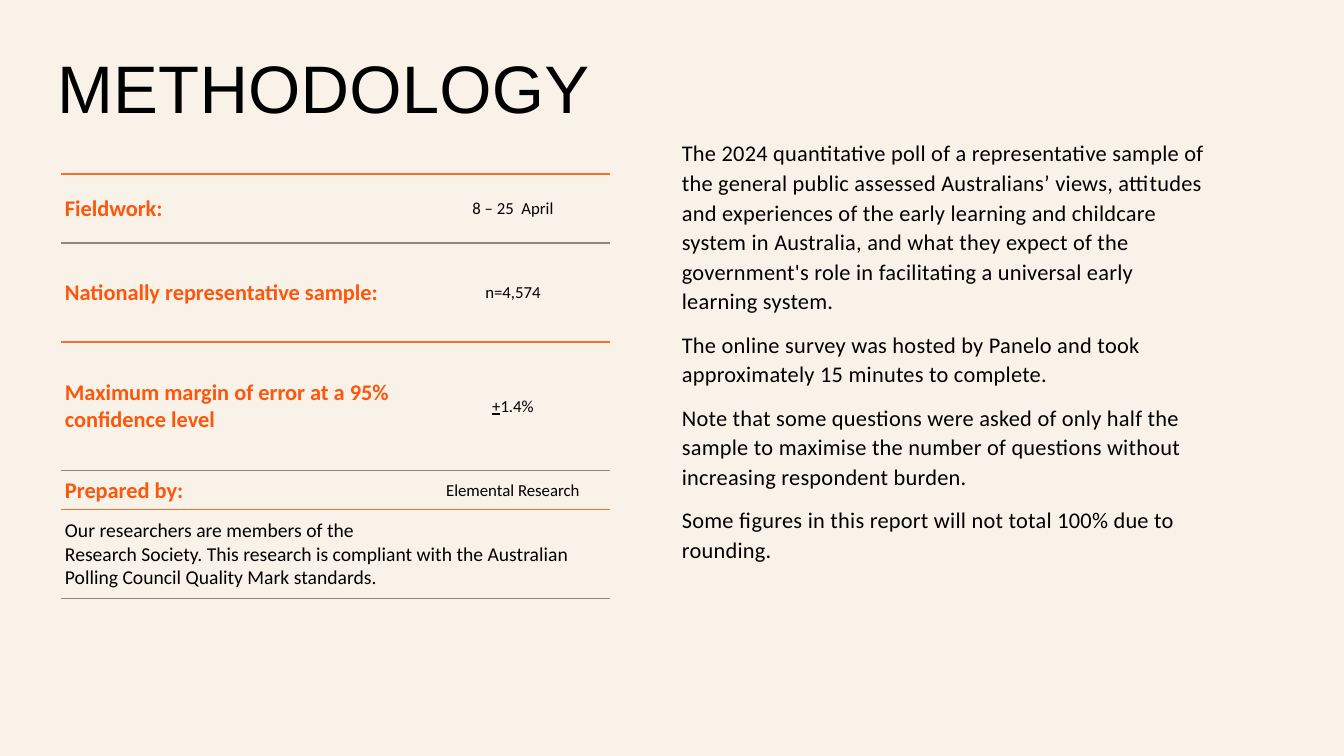
import pptx
import pptx.dml.color
import pptx.enum.text
import pptx.oxml
import pptx.oxml.ns
import pptx.util

RGBColor = pptx.dml.color.RGBColor
CREAM = RGBColor(0xF8, 0xF2, 0xE8)
BLACK = RGBColor(0x00, 0x00, 0x00)
INK = RGBColor(0x01, 0x00, 0x00)
ORANGE = RGBColor(0xFE, 0x56, 0x0C)
RULE_ORANGE = RGBColor(0xFF, 0x6C, 0x2C)
RULE_GREY = RGBColor(0x8F, 0x88, 0x82)
MIDDLE = pptx.enum.text.MSO_ANCHOR.MIDDLE
LEFT = pptx.enum.text.PP_ALIGN.LEFT
CENTER = pptx.enum.text.PP_ALIGN.CENTER
NO_TABLE_STYLE = "{2D5ABB26-0587-4C30-8999-92F81FD0307C}"


def px(length):
    return round(length * 914400 / 100.8)


def write(para, text, size, color, font="Calibri", bold=False, tracking=0):
    """Add a formatted run; tracking is in hundredths of a point."""
    span = para.add_run()
    span.text = text
    formats = {"name": font, "size": pptx.util.Pt(size), "bold": bold}
    for name, value in formats.items():
        setattr(span.font, name, value)
    span.font.color.rgb = color
    if tracking:
        para.runs[-1]._r.get_or_add_rPr().set("spc", str(tracking))
    return span


deck = pptx.Presentation()
deck.slide_width, deck.slide_height = px(1344), px(756)
page = deck.slides.add_slide(deck.slide_layouts[5])
page.background.fill.solid()
page.background.fill.fore_color.rgb = CREAM

# Title
title = page.shapes.title
title.left, title.top, title.width, title.height = px(47), px(40), px(623), px(85)
title.text_frame.vertical_anchor = MIDDLE
title.text_frame.auto_size = pptx.enum.text.MSO_AUTO_SIZE.NONE
para = title.text_frame.paragraphs[0]
para.alignment = LEFT
para.line_spacing = 1.1
write(para, "METHODOLOGY", 48, BLACK, font="Arial", tracking=20)

# Explanation on the right
box = page.shapes.add_textbox(px(672), px(132), px(549), px(579))
box.text_frame.word_wrap = True
notes = [
    "The 2024 quantitative poll of a representative sample of the general public "
    "assessed Australians’ views, attitudes and experiences of the early learning "
    "and childcare system in Australia, and what they expect of the government's "
    "role in facilitating a universal early learning system.",
    "The online survey was hosted by Panelo and took approximately 15 minutes to complete.",
    "Note that some questions were asked of only half the sample to maximise the "
    "number of questions without increasing respondent burden.",
    "Some figures in this report will not total 100% due to rounding.",
]
for index, note in enumerate(notes):
    para = box.text_frame.add_paragraph() if index else box.text_frame.paragraphs[0]
    para.line_spacing = 1.1
    para.space_after = pptx.util.Pt(10)
    write(para, note, 16, INK, tracking=20)

# Survey facts
facts = [
    ("Fieldwork:", "8 – 25  April"),
    ("Nationally representative sample:", "n=4,574"),
    ("Maximum margin of error at a 95% confidence level", "+1.4%"),
    ("Prepared by:", "Elemental Research"),
]
column_widths = [355, 194]
row_heights = [42, 69, 99, 129, 39, 89]
frame = page.shapes.add_table(len(row_heights), len(column_widths), px(61), px(132),
                              px(sum(column_widths)), px(sum(row_heights)))
table = frame.table
table.first_row = table.horz_banding = False
table._tbl.tblPr.find(pptx.oxml.ns.qn("a:tableStyleId")).text = NO_TABLE_STYLE
for column, width in zip(table.columns, column_widths):
    column.width = px(width)

for row_index, height in enumerate(row_heights):
    table.rows[row_index].height = px(height)
    rule = RULE_GREY if row_index % 2 else RULE_ORANGE
    for cell in table.rows[row_index].cells:
        cell.vertical_anchor = MIDDLE
        cell.margin_left = cell.margin_right = px(4)
        cell.margin_top = cell.margin_bottom = px(5)
        properties = cell._tc.get_or_add_tcPr()
        properties.append(pptx.oxml.parse_xml(
            f'<a:lnB {pptx.oxml.ns.nsdecls("a")} w="12700"><a:solidFill>'
            f'<a:srgbClr val="{rule}"/></a:solidFill></a:lnB>'))
        cell.fill.background()

for row_index, (label, value) in enumerate(facts, start=1):
    write(table.cell(row_index, 0).text_frame.paragraphs[0], label, 16, ORANGE, bold=True)
    para = table.cell(row_index, 1).text_frame.paragraphs[0]
    para.alignment = CENTER
    if value.startswith("+"):
        write(para, "+", 12, INK).font.underline = True
        value = value[1:]
    write(para, value, 12, INK)

table.cell(5, 0).merge(table.cell(5, 1))
para = table.cell(5, 0).text_frame.paragraphs[0]
write(para, "Our researchers are members of the ", 14, INK)
para.add_line_break()
write(para, "Research Society. This research is compliant with the Australian "
      "Polling Council Quality Mark standards.", 14, INK)

deck.save("out.pptx")
